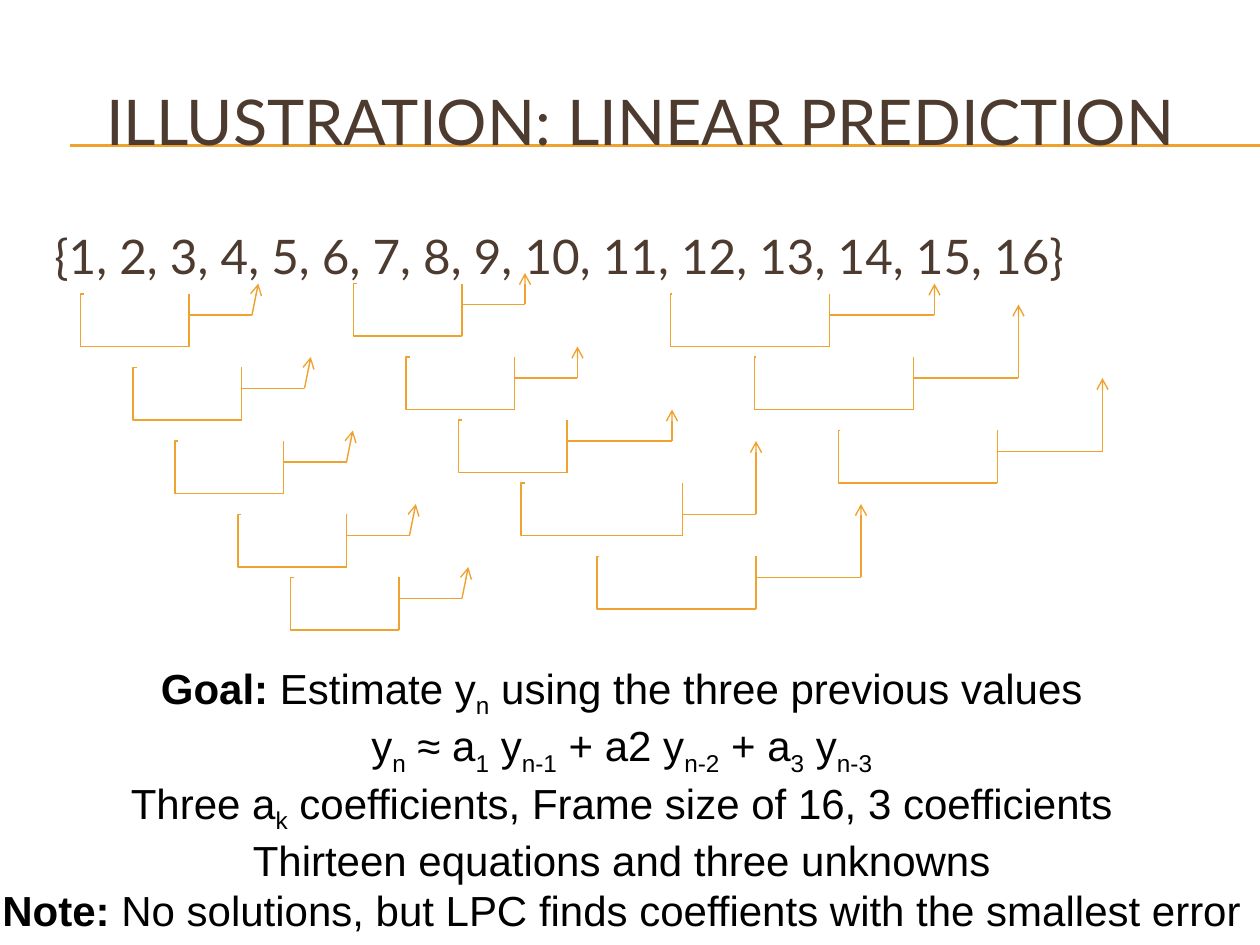
"""Build a slide that illustrates linear prediction over a frame of 16 values."""
from lxml import etree
from pptx import Presentation
from pptx.dml.color import RGBColor
from pptx.enum.shapes import MSO_CONNECTOR
from pptx.enum.text import MSO_ANCHOR, MSO_AUTO_SIZE, PP_ALIGN
from pptx.oxml.ns import qn
from pptx.util import Pt

LINE, ELBOW = MSO_CONNECTOR.STRAIGHT, MSO_CONNECTOR.ELBOW
LEFT, CENTER = PP_ALIGN.LEFT, PP_ALIGN.CENTER
TOP, MIDDLE = MSO_ANCHOR.TOP, MSO_ANCHOR.MIDDLE
GROW, FIXED = MSO_AUTO_SIZE.SHAPE_TO_FIT_TEXT, MSO_AUTO_SIZE.NONE
GOLD, BROWN, BLACK = "F0A22E", "4E3B30", "000000"

deck = Presentation()
deck.slide_width, deck.slide_height = Pt(720), Pt(540)
slide = deck.slides.add_slide(deck.slide_layouts[6])


def add_text(rows, box, size, font, color, align=CENTER, anchor=TOP, wrap=True, fit=FIXED):
    """Each row is (bold lead, rest); bars in the rest switch subscript on and off."""
    frame = slide.shapes.add_textbox(*map(Pt, box)).text_frame
    frame.word_wrap, frame.auto_size, frame.vertical_anchor = wrap, fit, anchor
    for i, (lead, rest) in enumerate(rows):
        para = frame.add_paragraph() if i else frame.paragraphs[0]
        para.alignment = align
        for j, part in enumerate([lead] + rest.split("|")):
            if not part:
                continue
            run = para.add_run()
            run.text = part
            run.font.size, run.font.name, run.font.bold = Pt(size), font, j == 0
            run.font.color.rgb = RGBColor.from_string(color)
            if j and j % 2 == 0:
                run.font._element.set("baseline", "-25000")


def add_line(start, end, kind=LINE, width=0.79, bend=None, arrow=False):
    """Draw a gold line, with an optional elbow bend or arrowhead."""
    line = slide.shapes.add_connector(kind, *map(Pt, start + end))
    line.line.color.rgb = RGBColor.from_string(GOLD)
    line.line.width = Pt(width)
    props = line._element.spPr
    if bend is not None:
        guides = props.find(qn("a:prstGeom")).find(qn("a:avLst"))
        etree.SubElement(guides, qn("a:gd"), name="adj1", fmla=f"val {round(bend * 100000)}")
    if arrow:
        etree.SubElement(props.find(qn("a:ln")), qn("a:tailEnd"), type="arrow")
    etree.SubElement(props, qn("a:effectLst"))


for y in (82.8, 83.5):
    add_line((40.3, y), (720, y), width=0.75)

add_text([("", "ILLUSTRATION: LINEAR PREDICTION")], (24, 36, 684, 66), 36, "Lato", BROWN,
         anchor=MIDDLE)
values = ", ".join(str(n) for n in range(1, 17))
add_text([("", "{" + values + "}")], (24, 126, 648, 48), 27.2, "Lato", BROWN, align=LEFT)

# left, top, width, notch, stem drop, stem length, tip lean, tip rise
frames = [
    (48, 168, 60, 1.9, 12, 36, 3.6, 18),
    (78, 210, 60, 1.9, 12, 36, 3.6, 18),
    (102, 252, 60, 1.9, 12, 36, 3.6, 18),
    (138, 294, 60, 1.9, 12, 36, 3.6, 18),
    (168, 330, 60, 1.9, 12, 36, 3.6, 18),
    (204, 162, 60, 1.9, 12, 36, 0, 18),
    (234, 204, 60, 1.9, 12, 36, 0, 18),
    (264, 240, 60, 1.9, 12, 60, 0, 18),
    (300, 276, 90, 2.25, 18, 42, 0, 42),
    (342, 318, 90, 1, 12, 60, 0, 42),
    (384, 168, 90, 1, 12, 60, 0, 18),
    (432, 204, 90, 1, 12, 60, 0, 42),
    (480, 246, 90, 1, 12, 60, 0, 42),
]
for left, top, width, notch, drop, stem, lean, rise in frames:
    right, base, mid = left + width, top + 30, top + drop
    turn = right + stem
    add_line((left, top), (right, base), kind=ELBOW, bend=-notch / width)
    add_line((right, base), (right, top))
    add_line((turn, mid), (turn + lean, mid - rise), arrow=True)
    add_line((turn, mid), (right, mid))

goals = [
    ("Goal:", " Estimate y|n| using the three previous values"),
    ("", "y|n| ≈ a|1| y|n-1| + a2 y|n-2| + a|3| y|n-3"),
    ("", "Three a|k| coefficients, Frame size of 16, 3 coefficients"),
    ("", "Thirteen equations and three unknowns"),
    ("Note: ", "No solutions, but LPC finds coeffients with the smallest error"),
]
add_text(goals, (-9.4, 375, 729.4, 152.6), 24, "Arial", BLACK, wrap=False, fit=GROW)

deck.save("out.pptx")
